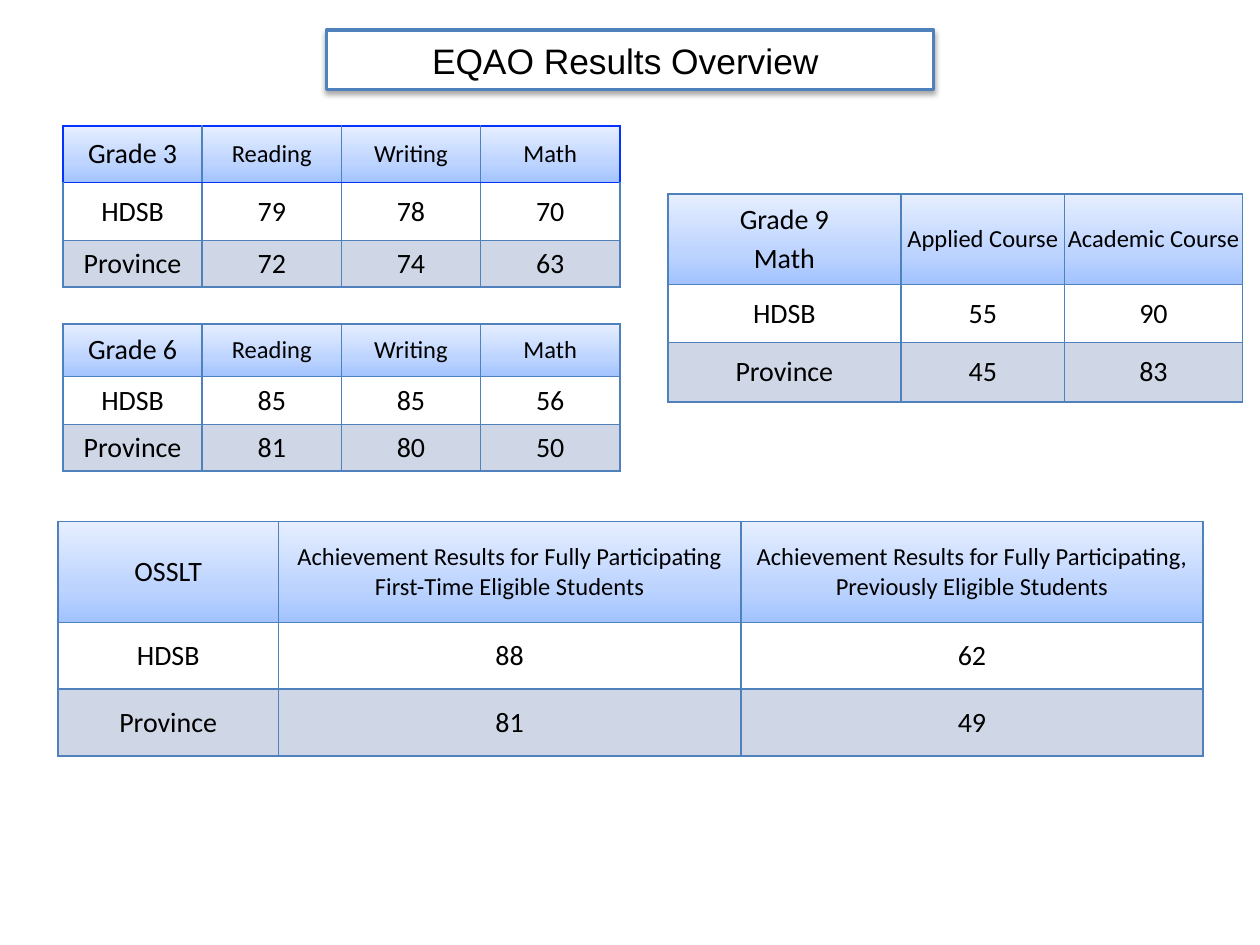
import pptx
import pptx.util
import pptx.dml.color
import pptx.enum.text
import pptx.oxml
import pptx.oxml.ns

Inches, Pt = pptx.util.Inches, pptx.util.Pt
RGB = pptx.dml.color.RGBColor.from_string
MIDDLE = pptx.enum.text.MSO_ANCHOR.MIDDLE
CENTER = pptx.enum.text.PP_ALIGN.CENTER

THEME = {
    "ink": "000000", "paper": "FFFFFF", "band": "CFD7E7",
    "line": "4F81BD", "accent": "0433FF",
    "grad": [(0, "A2C3FF"), (35, "BDD4FF"), (100, "E6EEFF")],
    "head": "Arial", "body": "Calibri",
    "title": 20.2, "label": 14, "value": 16,
}

TITLE = "EQAO Results Overview "
SUBJECTS = ["Reading", "Writing", "Math"]
TABLES = [
    {"at": (0.5, 2.57), "cols": [1.105] * 4, "rows": [0.42, 0.38, 0.37],
     "data": [["Grade 6", *SUBJECTS],
              ["HDSB", "85", "85", "56"],
              ["Province", "81", "80", "50"]]},
    {"at": (0.5, 1), "cols": [1.105] * 4, "rows": [0.45, 0.46, 0.37], "accent": True,
     "data": [["Grade 3", *SUBJECTS],
              ["HDSB", "79", "78", "70"],
              ["Province", "72", "74", "63"]]},
    {"at": (5.3, 1.54), "cols": [1.85, 1.3, 1.41], "rows": [0.72, 0.46, 0.47],
     "data": [["Grade 9\nMath", "Applied Course", "Academic Course"],
              ["HDSB", "55", "90"],
              ["Province", "45", "83"]]},
    {"at": (0.46, 4.14), "cols": [1.75, 3.67, 3.67], "rows": [0.8, 0.53, 0.53],
     "data": [["OSSLT",
               "Achievement Results for Fully Participating First-Time Eligible Students",
               "Achievement Results for Fully Participating, Previously Eligible Students"],
              ["HDSB", "88", "62"],
              ["Province", "81", "49"]]},
]


def apply(thing, values):
    for name, value in values.items():
        setattr(thing, name, value)


def add_xml(parent, tag, body, attrs=""):
    space = pptx.oxml.ns.nsdecls("a")
    parent.append(pptx.oxml.parse_xml(f"<a:{tag} {space} {attrs}>{body}</a:{tag}>"))


def style(para, face, size):
    para.alignment = CENTER
    apply(para.font, {"name": face, "size": Pt(size), "bold": False})
    para.font.color.rgb = RGB(THEME["ink"])


def add_title(slide):
    box = slide.shapes.title
    apply(box, {"left": Inches(2.59), "top": Inches(0.24),
                "width": Inches(4.82), "height": Inches(0.47)})
    box.fill.solid()
    box.fill.fore_color.rgb = RGB(THEME["paper"])
    box.line.color.rgb = RGB(THEME["line"])
    box.line.width = Pt(2)
    add_xml(box._element.spPr, "effectLst",
            f'<a:outerShdw blurRad="{Pt(3)}" dist="{Pt(1.8)}" dir="5400000" rotWithShape="0">'
            f'<a:srgbClr val="{THEME["ink"]}"><a:alpha val="35000"/></a:srgbClr></a:outerShdw>')
    frame = box.text_frame
    sides = ("left", "right", "top", "bottom")
    apply(frame, {f"margin_{side}": Inches(0.05) for side in sides})
    apply(frame, {"word_wrap": True, "vertical_anchor": MIDDLE,
                  "auto_size": pptx.enum.text.MSO_AUTO_SIZE.NONE, "text": TITLE})
    style(frame.paragraphs[0], THEME["head"], THEME["title"])


def edges(row, col, last, accent):
    """Border colours of a cell; the accent outlines the header row."""
    lit = {"L": row == 0 and col == 0, "R": row == 0 and col == last,
           "T": row < 2, "B": row == 0}
    return {side: THEME["accent" if accent and on else "line"]
            for side, on in lit.items()}


def fill_cell(cell, row, col, text, borders):
    apply(cell, {f"margin_{side}": 0 for side in ("left", "right", "top", "bottom")})
    apply(cell, {"vertical_anchor": MIDDLE, "text": text})
    size = THEME["label" if row == 0 and col else "value"]
    for i, para in enumerate(cell.text_frame.paragraphs):
        style(para, THEME["body"], size)
        if i:
            para.space_before = Pt(3)

    props = cell._tc.get_or_add_tcPr()
    for side, color in borders.items():
        add_xml(props, f"ln{side}",
                f'<a:solidFill><a:srgbClr val="{color}"/></a:solidFill>',
                f'w="{Pt(1)}"')
    if row == 0:
        stops = "".join(f'<a:gs pos="{pos * 1000}"><a:srgbClr val="{color}"/></a:gs>'
                        for pos, color in THEME["grad"])
        add_xml(props, "gradFill", f'<a:gsLst>{stops}</a:gsLst><a:lin ang="16200000" scaled="0"/>')
    else:
        cell.fill.solid()
        cell.fill.fore_color.rgb = RGB(THEME["paper" if row == 1 else "band"])


def add_grid(slide, item):
    cols, rows, data = item["cols"], item["rows"], item["data"]
    spot = [Inches(n) for n in (*item["at"], sum(cols), sum(rows))]
    table = slide.shapes.add_table(len(rows), len(cols), *spot).table
    apply(table, {"first_row": False, "horz_banding": False})
    for col, width in zip(table.columns, cols):
        col.width = Inches(width)
    for row, height in zip(table.rows, rows):
        row.height = Inches(height)
    for r, line in enumerate(data):
        for c, text in enumerate(line):
            borders = edges(r, c, len(cols) - 1, item.get("accent", False))
            fill_cell(table.cell(r, c), r, c, text, borders)


def main():
    deck = pptx.Presentation()
    apply(deck, {"slide_width": Inches(10), "slide_height": Inches(7.5)})
    slide = deck.slides.add_slide(deck.slide_layouts[5])
    add_title(slide)
    for item in TABLES:
        add_grid(slide, item)
    deck.save("out.pptx")


if __name__ == "__main__":
    main()
